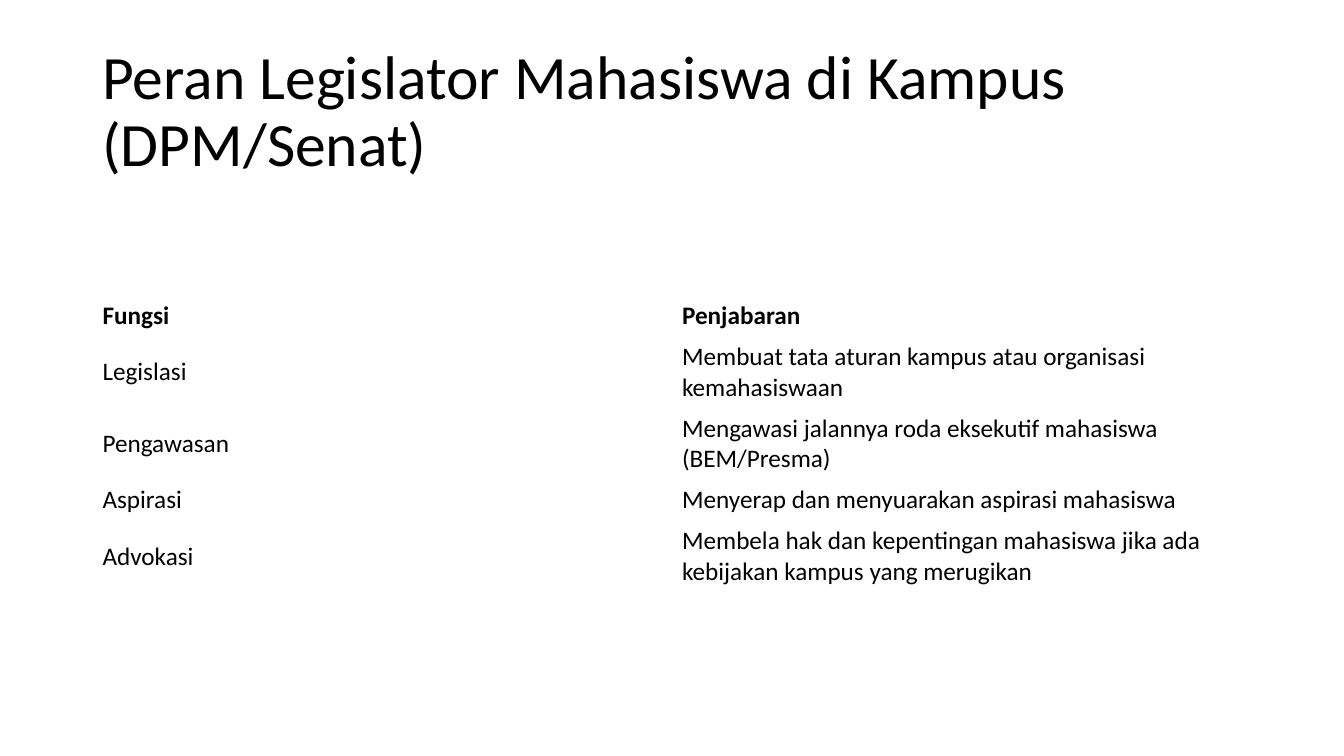
from pptx import Presentation
from pptx import util as u
from pptx.dml.color import RGBColor
from pptx.enum import text

BLACK = RGBColor(0, 0, 0)
LEFT, WIDTH = u.Cm(2.33), u.Cm(29.21)
LINE_HEIGHT, ROW_PADDING = 0.78, 0.25

TITLE = "Peran Legislator Mahasiswa di Kampus (DPM/Senat)"
FUNCTIONS = [
    ("Fungsi", "Penjabaran", 1),
    ("Legislasi", "Membuat tata aturan kampus atau organisasi kemahasiswaan", 2),
    ("Pengawasan", "Mengawasi jalannya roda eksekutif mahasiswa (BEM/Presma)", 2),
    ("Aspirasi", "Menyerap dan menyuarakan aspirasi mahasiswa", 1),
    ("Advokasi", "Membela hak dan kepentingan mahasiswa jika ada kebijakan kampus yang merugikan", 2),
]


def write(paragraph, words, size, bold=False):
    """Put one formatted run of text into a paragraph."""
    run = paragraph.add_run()
    run.text = words
    run.font.color.rgb = BLACK
    for name, value in {"name": "Calibri", "size": u.Pt(size), "bold": bold}.items():
        setattr(run.font, name, value)


def add_title(slide, words):
    """Add the slide heading, centred vertically in its box."""
    heading = slide.shapes.add_textbox(LEFT, u.Cm(1.01), WIDTH, u.Cm(3.68)).text_frame
    heading.word_wrap = True
    heading.vertical_anchor = text.MSO_ANCHOR.MIDDLE
    heading.paragraphs[0].line_spacing = 0.9
    write(heading.paragraphs[0], words, 44)


def add_function_table(slide, functions):
    """Add the plain table of functions, with rows sized by line count."""
    heights = [u.Cm(lines * LINE_HEIGHT + ROW_PADDING) for *_, lines in functions]
    table = slide.shapes.add_table(
        len(functions), 2, LEFT, u.Cm(7.44), WIDTH, sum(heights)
    ).table
    for name in ("first_row", "horz_banding"):
        setattr(table, name, False)
    for index, (function, description, _) in enumerate(functions):
        table.rows[index].height = heights[index]
        for cell, words in zip(table.rows[index].cells, (function, description)):
            cell.fill.background()
            cell.vertical_anchor = text.MSO_ANCHOR.MIDDLE
            write(cell.text_frame.paragraphs[0], words, 18, bold=index == 0)


def main():
    """Build and save the slide."""
    deck = Presentation()
    deck.slide_width, deck.slide_height = u.Cm(33.87), u.Cm(19.05)
    slide = deck.slides.add_slide(deck.slide_layouts[6])
    add_title(slide, TITLE)
    add_function_table(slide, FUNCTIONS)
    deck.save("out.pptx")


if __name__ == "__main__":
    main()
